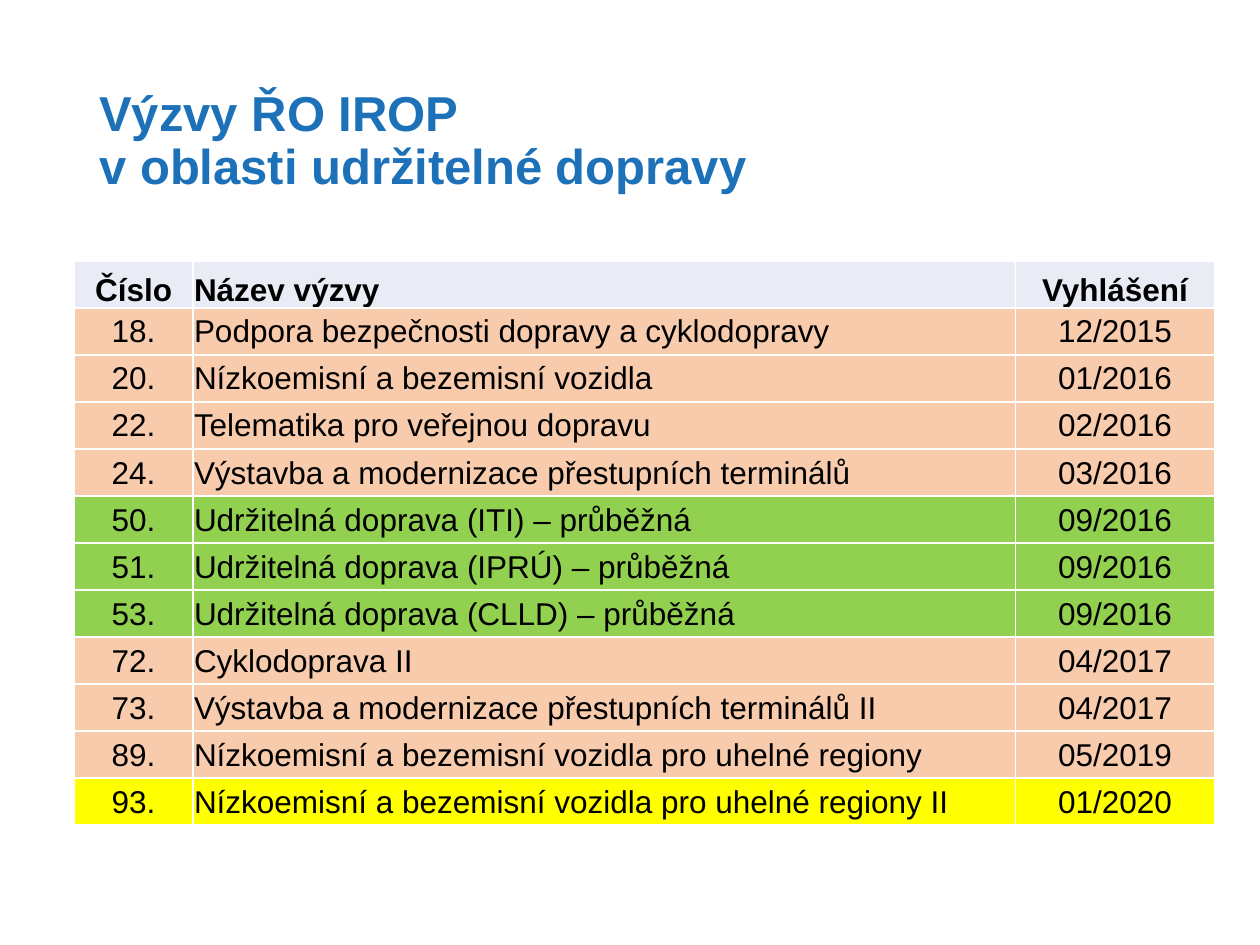
from lxml import etree
from pptx import Presentation
from pptx.dml.color import RGBColor
from pptx.enum.text import MSO_ANCHOR, PP_ALIGN
from pptx.oxml.ns import qn
from pptx.util import Inches, Pt

LEFT, CENTER = PP_ALIGN.LEFT, PP_ALIGN.CENTER
MIDDLE, BOTTOM = MSO_ANCHOR.MIDDLE, MSO_ANCHOR.BOTTOM

TITLE = "Výzvy ŘO IROP\vv oblasti udržitelné dopravy"
BLUE, BLACK, WHITE = "1D71B8", "000000", "FFFFFF"
HEADER, ORANGE, GREEN, YELLOW = "E9EBF5", "F8CBAD", "92D050", "FFFF00"
COLUMNS = [(0.94, CENTER), (6.53, LEFT), (1.58, CENTER)]
ROWS = [
    (HEADER, "Číslo", "Název výzvy", "Vyhlášení"),
    (ORANGE, "18.", "Podpora bezpečnosti dopravy a cyklodopravy", "12/2015"),
    (ORANGE, "20.", "Nízkoemisní a bezemisní vozidla", "01/2016"),
    (ORANGE, "22.", "Telematika pro veřejnou dopravu", "02/2016"),
    (ORANGE, "24.", "Výstavba a modernizace přestupních terminálů", "03/2016"),
    (GREEN, "50.", "Udržitelná doprava (ITI) – průběžná", "09/2016"),
    (GREEN, "51.", "Udržitelná doprava (IPRÚ) – průběžná", "09/2016"),
    (GREEN, "53.", "Udržitelná doprava (CLLD) – průběžná", "09/2016"),
    (ORANGE, "72.", "Cyklodoprava II", "04/2017"),
    (ORANGE, "73.", "Výstavba a modernizace přestupních terminálů II", "04/2017"),
    (ORANGE, "89.", "Nízkoemisní a bezemisní vozidla pro uhelné regiony", "05/2019"),
    (YELLOW, "93.", "Nízkoemisní a bezemisní vozidla pro uhelné regiony II", "01/2020"),
]
TABLE_LEFT, TABLE_TOP, TABLE_HEIGHT = 0.59, 2.07, 4.48


def color(value):
    return RGBColor.from_string(value)


def style_runs(paragraph, size, value, bold):
    for run in paragraph.runs:
        run.font.name = "Arial"
        run.font.size = Pt(size)
        run.font.bold = bold
        run.font.color.rgb = color(value)


def add_borders(cell):
    properties = cell._tc.get_or_add_tcPr()
    for side in ("a:lnL", "a:lnR", "a:lnT", "a:lnB"):
        line = etree.SubElement(properties, qn(side), w=str(Pt(1)))
        fill = etree.SubElement(line, qn("a:solidFill"))
        etree.SubElement(fill, qn("a:srgbClr"), val=WHITE)


def add_title(slide):
    box = slide.shapes.add_textbox(Inches(0.69), Inches(0.4), Inches(8.62), Inches(1.45))
    text_frame = box.text_frame
    text_frame.word_wrap = True
    text_frame.vertical_anchor = MIDDLE
    text_frame.text = TITLE
    paragraph = text_frame.paragraphs[0]
    paragraph.line_spacing = 0.9
    style_runs(paragraph, 28, BLUE, True)


def fill_cell(cell, text, fill, alignment, is_header):
    cell.text_frame.text = text
    cell.margin_left = cell.margin_right = cell.margin_top = Inches(0.01)
    cell.margin_bottom = 0
    cell.vertical_anchor = BOTTOM if is_header else MIDDLE
    add_borders(cell)
    cell.fill.solid()
    cell.fill.fore_color.rgb = color(fill)
    paragraph = cell.text_frame.paragraphs[0]
    paragraph.alignment = alignment
    style_runs(paragraph, 18, BLACK, is_header)


def add_calls_table(slide):
    width = sum(column_width for column_width, _ in COLUMNS)
    table = slide.shapes.add_table(
        len(ROWS), len(COLUMNS), Inches(TABLE_LEFT), Inches(TABLE_TOP),
        Inches(width), Inches(TABLE_HEIGHT)).table
    for column, (column_width, _) in zip(table.columns, COLUMNS):
        column.width = Inches(column_width)
    for row_index, (fill, *texts) in enumerate(ROWS):
        table.rows[row_index].height = Inches(TABLE_HEIGHT / len(ROWS))
        for column_index, text in enumerate(texts):
            fill_cell(table.cell(row_index, column_index), text, fill,
                      COLUMNS[column_index][1], row_index == 0)


def main():
    """Build the slide listing the calls for sustainable transport."""
    presentation = Presentation()
    presentation.slide_width = Inches(10)
    presentation.slide_height = Inches(7.5)
    slide = presentation.slides.add_slide(presentation.slide_layouts[6])
    add_title(slide)
    add_calls_table(slide)
    presentation.save("out.pptx")


if __name__ == "__main__":
    main()
